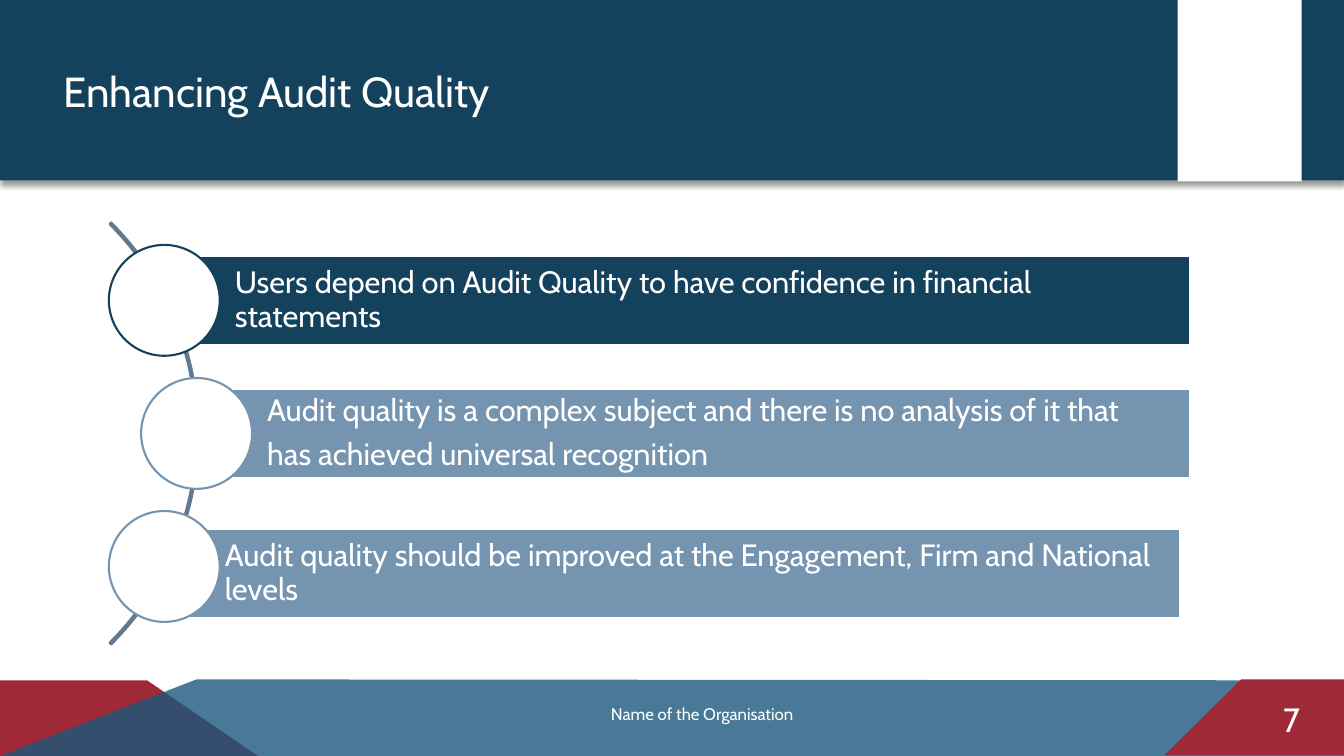
from dataclasses import dataclass

from lxml.etree import SubElement
from pptx import Presentation
from pptx.dml.color import RGBColor
from pptx.enum.shapes import MSO_SHAPE
from pptx.enum.text import MSO_ANCHOR, PP_ALIGN
from pptx.oxml.ns import qn
from pptx.util import Inches, Pt


@dataclass(frozen=True)
class Theme:
    font: str = "Cabin"
    white: str = "FFFFFF"
    header: str = "14425D"
    navy: str = "14415C"
    steel: str = "7594B0"
    arc: str = "607891"
    red: str = "9F2936"
    teal: str = "1B587C"
    title_size: int = 30
    body_size: int = 22
    number_size: int = 24
    footer_size: int = 12
    outline: float = 1.5


THEME = Theme()
CIRCLE_SIZE = 1.1
BAR_HEIGHT = 0.88

POINTS = [
    (1.08, 2.43, 1.63, 2.54, 10.17, THEME.navy,
     ["Users depend on Audit Quality to have confidence in financial statements"]),
    (1.4, 3.75, 1.95, 3.86, 9.85, THEME.steel,
     ["Audit quality is a complex subject and there is no analysis of it that",
      "has achieved universal recognition"]),
    (1.08, 5.07, 1.53, 5.25, 10.17, THEME.steel,
     ["Audit quality should be improved at the Engagement, Firm and National levels"]),
]


def style_shape(shape, fill=None, line=None):
    shape.shadow.inherit = False
    if fill:
        shape.fill.solid()
        shape.fill.fore_color.rgb = RGBColor.from_string(fill)
    else:
        shape.fill.background()
    if line:
        shape.line.color.rgb = RGBColor.from_string(line)
        shape.line.width = Pt(THEME.outline)
    else:
        shape.line.fill.background()


def add_preset(slide, kind, left, top, width, height, fill=None, line=None):
    shape = slide.shapes.add_shape(
        kind, Inches(left), Inches(top), Inches(width), Inches(height))
    style_shape(shape, fill, line)
    return shape


def add_polygon(slide, points, fill):
    corners = [(Inches(x), Inches(y)) for x, y in points]
    builder = slide.shapes.build_freeform(*corners[0])
    builder.add_line_segments(corners[1:], close=True)
    shape = builder.convert_to_shape()
    style_shape(shape, fill)
    return shape


def set_alpha(color_element, percent):
    SubElement(color_element, qn("a:alpha"), val=str(percent * 1000))


def add_drop_shadow(shape):
    effects = shape.element.spPr.find(qn("a:effectLst"))
    shadow = SubElement(effects, qn("a:outerShdw"), blurRad=str(Pt(4)),
                        dist=str(Pt(3)), dir="5400000", rotWithShape="0")
    set_alpha(SubElement(shadow, qn("a:srgbClr"), val="000000"), 40)


def write_text(text_frame, lines, size, alignment=PP_ALIGN.LEFT):
    text_frame.word_wrap = True
    text_frame.text = "\n".join(lines)
    for paragraph in text_frame.paragraphs:
        paragraph.alignment = alignment
        paragraph.font.name = THEME.font
        paragraph.font.size = Pt(size)
        paragraph.font.color.rgb = RGBColor.from_string(THEME.white)


def add_label(slide, left, top, width, height, text, size):
    box = slide.shapes.add_textbox(
        Inches(left), Inches(top), Inches(width), Inches(height))
    write_text(box.text_frame, [text], size, PP_ALIGN.CENTER)


def add_footer(slide):
    add_polygon(slide, [(0, 7.5), (0, 6.75), (1.46, 6.75), (2.56, 7.5)], THEME.red)
    band = add_polygon(
        slide, [(0, 7.5), (1.95, 6.74), (13.33, 6.75), (13.33, 7.5)], THEME.teal)
    set_alpha(band.element.spPr.find(qn("a:solidFill"))[0], 80)
    add_polygon(
        slide, [(13.33, 7.49), (13.33, 6.74), (12.31, 6.74), (11.55, 7.49)], THEME.red)
    add_label(slide, 12.29, 6.88, 1.04, 0.5, "7", THEME.number_size)
    add_label(slide, 2.26, 6.93, 9.41, 0.3, "Name of the Organisation", THEME.footer_size)


def add_header(slide, text):
    band = add_preset(slide, MSO_SHAPE.RECTANGLE, 0, 0, 13.33, 1.79, THEME.header)
    add_drop_shadow(band)
    add_preset(slide, MSO_SHAPE.RECTANGLE, 11.68, 0, 1.23, 1.8, THEME.white)
    title = slide.shapes.title
    title.left, title.top = Inches(0.53), Inches(0.6)
    title.width, title.height = Inches(11.15), Inches(0.61)
    title.text_frame.vertical_anchor = MSO_ANCHOR.MIDDLE
    write_text(title.text_frame, [text], THEME.title_size)
    title.element.getparent().append(title.element)


def add_arc(slide):
    arc = add_preset(
        slide, MSO_SHAPE.BLOCK_ARC, -3.95, 1.34, 5.92, 5.92, line=THEME.arc)
    for index, value in enumerate((189, 27, 0.004)):
        arc.adjustments[index] = value


def add_point(slide, circle_left, circle_top, left, top, width, color, lines):
    bar = add_preset(slide, MSO_SHAPE.RECTANGLE, left, top, width, BAR_HEIGHT,
                     color, THEME.white)
    frame = bar.text_frame
    frame.vertical_anchor = MSO_ANCHOR.MIDDLE
    frame.margin_left = Inches(0.7)
    frame.margin_top = frame.margin_right = frame.margin_bottom = Inches(0.06)
    write_text(frame, lines, THEME.body_size)
    for paragraph in frame.paragraphs:
        paragraph.line_spacing = 0.9
        paragraph.space_after = Pt(0.35 * THEME.body_size)
    add_preset(slide, MSO_SHAPE.OVAL, circle_left, circle_top,
               CIRCLE_SIZE, CIRCLE_SIZE, THEME.white, color)


def main():
    presentation = Presentation()
    presentation.slide_width = Inches(13.33)
    presentation.slide_height = Inches(7.5)
    slide = presentation.slides.add_slide(presentation.slide_layouts[5])
    add_footer(slide)
    add_header(slide, "Enhancing Audit Quality")
    add_arc(slide)
    for point in POINTS:
        add_point(slide, *point)
    presentation.save("out.pptx")


if __name__ == "__main__":
    main()
